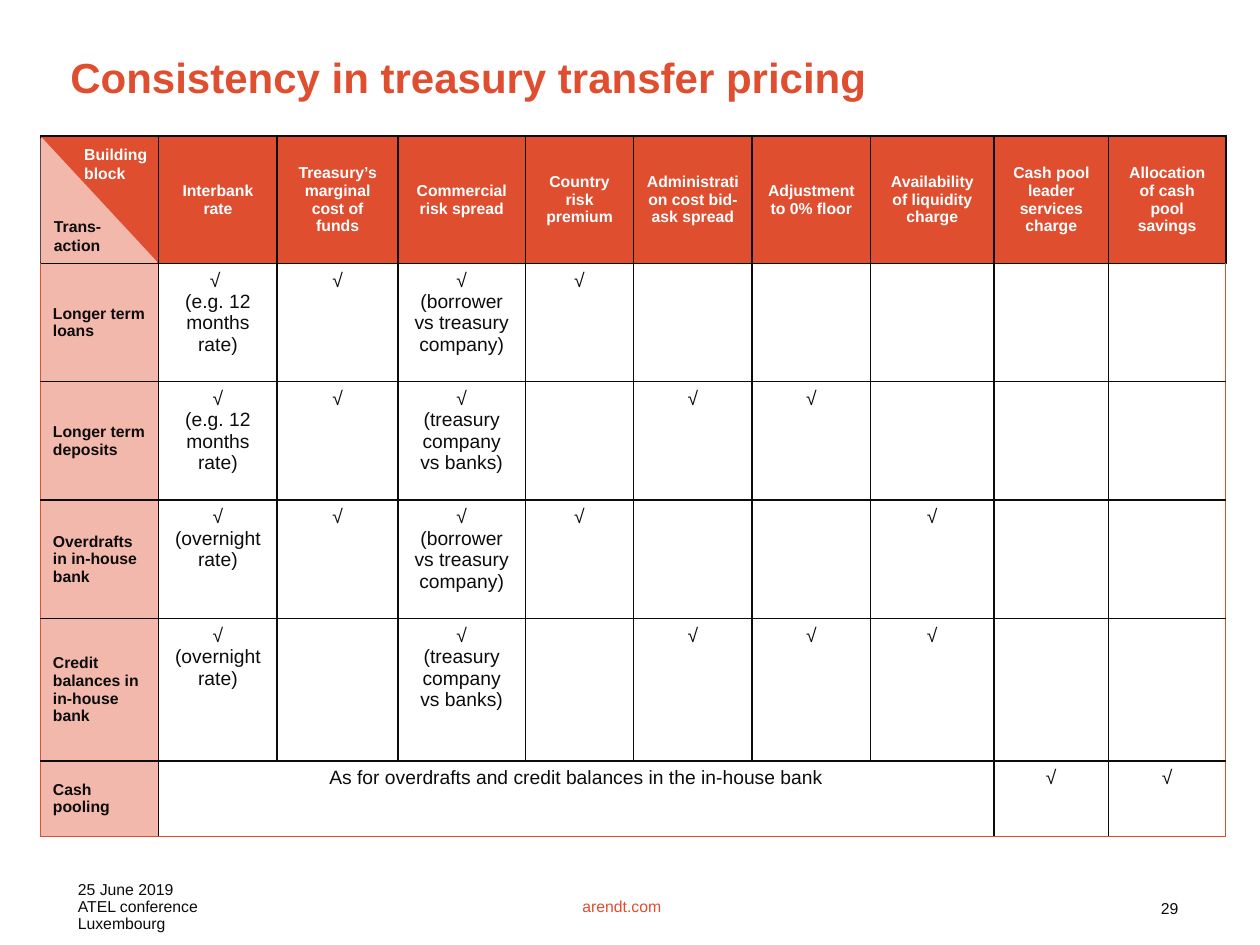
from lxml import etree
from pptx import Presentation
from pptx.dml.color import RGBColor
from pptx.enum.shapes import MSO_SHAPE
from pptx.enum.text import MSO_ANCHOR, PP_ALIGN
from pptx.oxml.ns import qn
from pptx.util import Inches, Pt

TOP, MIDDLE = MSO_ANCHOR.TOP, MSO_ANCHOR.MIDDLE
LEFT, CENTER, RIGHT = PP_ALIGN.LEFT, PP_ALIGN.CENTER, PP_ALIGN.RIGHT
TRIANGLE = MSO_SHAPE.RIGHT_TRIANGLE

RED, PINK, BLACK, WHITE = "E04E30", "F3B8AC", "0C0C0C", "FFFFFF"
SMALL = {"name": "Arial", "size": Pt(9), "bold": False}
LABEL = {**SMALL, "bold": True}
MARK = {**SMALL, "size": Pt(11)}
TITLE = {**LABEL, "size": Pt(24)}

COLUMN_WIDTHS = [0.94, 0.94, 0.96, 1.01, 0.86, 0.94, 0.94, 0.98, 0.91, 0.93]
ROW_HEIGHTS = [1.01, 0.94, 0.94, 0.94, 1.13, 0.6]
BUILDING_BLOCKS = [
    "Interbank rate", "Treasury’s marginal cost of funds",
    "Commercial risk spread", "Country risk premium",
    "Administration cost bid-ask spread", "Adjustment to 0% floor",
    "Availability of liquidity charge", "Cash pool leader services charge",
    "Allocation of cash pool savings",
]
YEAR_RATE = "√\n(e.g. 12 months rate)"
OVERNIGHT = "√\n(overnight rate)"
BORROWER = "√\n(borrower vs treasury company)"
TREASURY = "√\n(treasury company vs banks)"
# Transaction, then the text of each marked column
TRANSACTIONS = [
    ("Longer term loans",
     {1: YEAR_RATE.replace("√", "√ "), 2: "√", 3: BORROWER, 4: "√"}),
    ("Longer term deposits",
     {1: YEAR_RATE, 2: "√", 3: TREASURY, 5: "√", 6: "√"}),
    ("Overdrafts in in-house bank",
     {1: OVERNIGHT, 2: "√", 3: BORROWER, 4: "√", 7: "√"}),
    ("Credit balances in in-house bank",
     {1: OVERNIGHT, 3: TREASURY, 5: "√", 6: "√", 7: "√"}),
    ("Cash pooling",
     {1: "As for overdrafts and credit balances in the in-house bank",
      8: "√", 9: "√"}),
]


def color(value):
    return RGBColor.from_string(value)


def write(frame, text, font, ink, align=LEFT, spacing=None):
    """Fill a text frame, one paragraph for each line of text."""
    for index, line in enumerate(text.split("\n")):
        para = frame.add_paragraph() if index else frame.paragraphs[0]
        para.alignment = align
        para.line_spacing = spacing
        span = para.add_run()
        span.text = line
        for name, value in font.items():
            setattr(span.font, name, value)
        span.font.color.rgb = color(ink)


def add_text(page, bounds, text, font, ink, align=LEFT, anchor=TOP,
             spacing=None, right_inset=0.1):
    box = page.shapes.add_textbox(*map(Inches, bounds))
    frame = box.text_frame
    frame.word_wrap = True
    frame.vertical_anchor = anchor
    frame.margin_right = Inches(right_inset)
    write(frame, text, font, ink, align, spacing)


def set_borders(cell, row, column):
    """Black rules, with a thin red outline around the body rows."""
    outline = {
        "lnL": row > 0 and column == 0,
        "lnR": row > 0 and column == len(COLUMN_WIDTHS) - 1,
        "lnT": False,
        "lnB": row == len(ROW_HEIGHTS) - 1,
    }
    properties = cell._tc.get_or_add_tcPr()
    for position, (side, is_outline) in enumerate(outline.items()):
        line = etree.Element(qn(f"a:{side}"))
        line.set("w", str(Pt(0.5 if is_outline else 1)))
        fill = etree.SubElement(line, qn("a:solidFill"))
        ink = etree.SubElement(fill, qn("a:srgbClr"))
        ink.set("val", RED if is_outline else BLACK)
        properties.insert(position, line)


def fill_cell(cell, row, column, text):
    if row == 0:
        back, font, ink, align, anchor = RED, LABEL, WHITE, CENTER, MIDDLE
    elif column == 0:
        back, font, ink, align, anchor = PINK, LABEL, BLACK, LEFT, MIDDLE
    else:
        back, font, ink, align, anchor = WHITE, MARK, BLACK, CENTER, TOP
    cell.fill.solid()
    cell.fill.fore_color.rgb = color(back)
    cell.vertical_anchor = anchor
    if text:
        write(cell.text_frame, text, font, ink, align)
    set_borders(cell, row, column)


def add_pricing_table(page, left, top):
    size = sum(COLUMN_WIDTHS), sum(ROW_HEIGHTS)
    table = page.shapes.add_table(
        len(ROW_HEIGHTS), len(COLUMN_WIDTHS),
        *map(Inches, (left, top, *size))).table
    for column, width in zip(table.columns, COLUMN_WIDTHS):
        column.width = Inches(width)
    for row, height in zip(table.rows, ROW_HEIGHTS):
        row.height = Inches(height)
    rows = [dict(enumerate(BUILDING_BLOCKS, 1))]
    rows += [{0: name, **marks} for name, marks in TRANSACTIONS]
    for row, texts in enumerate(rows):
        for column in range(len(COLUMN_WIDTHS)):
            fill_cell(table.cell(row, column), row, column, texts.get(column))
    last = len(ROW_HEIGHTS) - 1
    table.cell(last, 1).merge(table.cell(last, 7))


def add_corner(page, left, top):
    """Split the table's first cell between its two headings."""
    triangle = page.shapes.add_shape(
        TRIANGLE, *map(Inches, (left, top, 0.91, 0.98)))
    triangle.shadow.inherit = False
    triangle.fill.solid()
    triangle.fill.fore_color.rgb = color(PINK)
    triangle.line.color.rgb = color(PINK)
    triangle.line.width = Pt(1)
    add_text(page, (left, top + 0.57, 0.68, 0.4), "Trans-action", LABEL, BLACK)
    add_text(page, (left + 0.24, top, 0.74, 0.4), "Building block", LABEL, WHITE)


def add_footer(page):
    add_text(page, (0.52, 6.95, 1.86, 0.41),
             "25 June 2019\nATEL conference Luxembourg", SMALL, BLACK,
             spacing=0.9, right_inset=0.3)
    add_text(page, (8.98, 7.08, 0.47, 0.29), "29", SMALL, BLACK, RIGHT)
    add_text(page, (4.1, 7.02, 1.67, 0.34), "arendt.com", SMALL, RED,
             CENTER, MIDDLE)


def main():
    deck = Presentation()
    deck.slide_width, deck.slide_height = Inches(10), Inches(7.5)
    page = deck.slides.add_slide(deck.slide_layouts[6])
    add_footer(page)
    add_text(page, (0.46, 0.22, 8.92, 0.82),
             "Consistency in treasury transfer pricing", TITLE, RED,
             anchor=MIDDLE, spacing=0.9)
    add_pricing_table(page, 0.32, 1.08)
    add_corner(page, 0.33, 1.1)
    deck.save("out.pptx")


if __name__ == "__main__":
    main()
